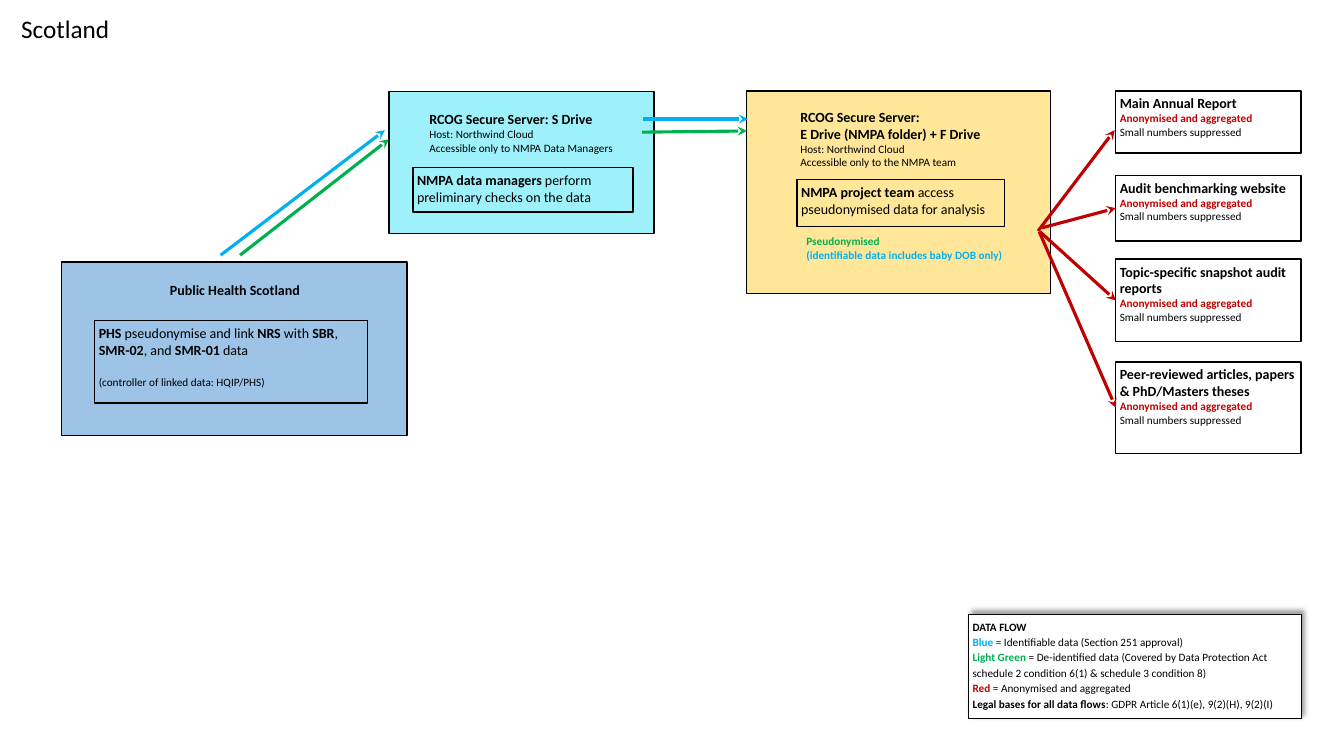
from dataclasses import dataclass

import pptx
import pptx.dml.color
import pptx.enum.shapes
import pptx.enum.text
import pptx.oxml
import pptx.oxml.ns
import pptx.util
from lxml import etree
from pptx.util import Cm, Pt


@dataclass(frozen=True)
class Theme:
    font: str = "Calibri"
    black: str = "000000"
    white: str = "FFFFFF"
    blue: str = "00B0F0"
    green: str = "00B050"
    red: str = "C00000"
    source_fill: str = "9DC3E6"
    s_drive_fill: str = "9EF1FA"
    e_drive_fill: str = "FFE699"
    title: int = 18
    body: int = 10
    small: int = 8
    outline: float = 1
    thin: float = 0.5
    arrow: float = 2.25


T = Theme()


@dataclass
class Run:
    text: str
    bold: bool = False
    color: str = T.black


@dataclass
class Para:
    runs: list
    size: int = T.body
    align: pptx.enum.text.PP_ALIGN = pptx.enum.text.PP_ALIGN.LEFT
    before: float = 0
    spacing: float = 1


def rgb(value):
    return pptx.dml.color.RGBColor.from_string(value)


def line(text, size=T.body, bold=False, color=T.black, **options):
    return Para([Run(text, bold, color)], size, **options)


def write(tf, paras, inset=0.1):
    tf.word_wrap = True
    tf.vertical_anchor = pptx.enum.text.MSO_ANCHOR.TOP
    if inset is not None:
        tf.margin_left = tf.margin_right = tf.margin_top = tf.margin_bottom = Cm(inset)
    for i, para in enumerate(paras):
        p = tf.paragraphs[0] if i == 0 else tf.add_paragraph()
        p.alignment = para.align
        p.space_before = Pt(para.before)
        p.line_spacing = para.spacing
        p.font.name = T.font
        p.font.size = Pt(para.size)
        same_bold = len({run.bold for run in para.runs}) == 1
        same_color = len({run.color for run in para.runs}) == 1
        if same_bold:
            p.font.bold = para.runs[0].bold
        if same_color:
            p.font.color.rgb = rgb(para.runs[0].color)
        for run in para.runs:
            r = p.add_run()
            r.text = run.text
            if not same_bold:
                r.font.bold = run.bold
            if not same_color:
                r.font.color.rgb = rgb(run.color)


def add_title(s, text, x, y, w, h):
    sp = s.shapes.title
    sp.left, sp.top, sp.width, sp.height = Cm(x), Cm(y), Cm(w), Cm(h)
    write(sp.text_frame, [line(text, T.title)], inset=None)
    sp.text_frame.auto_size = pptx.enum.text.MSO_AUTO_SIZE.SHAPE_TO_FIT_TEXT


def add_box(s, x, y, w, h, paras=(), fill=None, width=T.outline):
    sp = s.shapes.add_shape(pptx.enum.shapes.MSO_SHAPE.RECTANGLE, Cm(x), Cm(y), Cm(w), Cm(h))
    sp.shadow.inherit = False
    if fill:
        sp.fill.solid()
        sp.fill.fore_color.rgb = rgb(fill)
    else:
        sp.fill.background()
    sp.line.color.rgb = rgb(T.black)
    sp.line.width = Pt(width)
    write(sp.text_frame, paras)
    return sp


def add_label(s, x, y, w, h, paras, inset=0.1):
    sp = s.shapes.add_textbox(Cm(x), Cm(y), Cm(w), Cm(h))
    write(sp.text_frame, paras, inset)


def add_arrow(s, color, x1, y1, x2, y2):
    cxn = s.shapes.add_connector(
        pptx.enum.shapes.MSO_CONNECTOR.STRAIGHT, Cm(x1), Cm(y1), Cm(x2), Cm(y2))
    cxn.line.color.rgb = rgb(color)
    cxn.line.width = Pt(T.arrow)
    etree.SubElement(cxn.line._get_or_add_ln(), pptx.oxml.ns.qn("a:tailEnd"), type="stealth")
    etree.SubElement(cxn._element.spPr, pptx.oxml.ns.qn("a:effectLst"))
    return cxn


def add_shadow(sp):
    effects = sp._element.spPr.find(pptx.oxml.ns.qn("a:effectLst"))
    effects.append(pptx.oxml.parse_xml(
        f'<a:outerShdw {pptx.oxml.ns.nsdecls("a")} blurRad="{Pt(4)}" dist="{Pt(3)}" '
        f'dir="{315 * 60000}" algn="bl" rotWithShape="0"><a:srgbClr val="{T.black}">'
        '<a:alpha val="40000"/></a:srgbClr></a:outerShdw>'))


def add_source(s):
    add_box(s, 1.55, 6.6, 8.71, 4.37, fill=T.source_fill)
    add_label(s, 3.05, 6.99, 5.74, 0.58, [
        line("Public Health Scotland", bold=True, align=pptx.enum.text.PP_ALIGN.CENTER)])
    add_box(s, 2.39, 8.08, 6.88, 2.08, [
        Para([Run("PHS ", True), Run("pseudonymise and link "), Run("NRS ", True),
              Run("with "), Run("SBR", True), Run(", "), Run("SMR-02", True),
              Run(", and "), Run("SMR-01 ", True), Run("data")]),
        line("(controller of linked data: HQIP/PHS)", T.small, before=12)])


def add_s_drive(s):
    add_box(s, 9.8, 2.31, 6.68, 3.58, fill=T.s_drive_fill)
    add_label(s, 10.72, 2.69, 5, 1.4, [
        line("RCOG Secure Server: S Drive", bold=True),
        line("Host: Northwind Cloud", T.small),
        line("Accessible only to NMPA Data Managers", T.small)])
    add_box(s, 10.41, 4.22, 5.54, 1.12, [
        Para([Run("NMPA data managers ", True), Run("perform preliminary checks on the data")])])


def add_e_drive(s):
    add_box(s, 18.82, 2.29, 7.65, 5.11, fill=T.e_drive_fill)
    add_label(s, 20.07, 2.64, 5.26, 1.78, [
        line("RCOG Secure Server:", bold=True),
        line("E Drive (NMPA folder) + F Drive", bold=True),
        line("Host: Northwind Cloud", T.small),
        line("Accessible only to the NMPA team", T.small)])
    add_box(s, 20.09, 4.52, 5.23, 1.19, [
        Para([Run("NMPA project team ", True), Run("access pseudonymised data for analysis")])])
    add_label(s, 20.07, 5.79, 5.54, 1.27, [
        line("Pseudonymised", T.small, True, T.green),
        line("(identifiable data includes baby DOB only)", T.small, True, T.blue)], inset=None)


def add_outputs(s):
    outputs = [
        ("Main Annual Report", 2.29, 1.57, (26.16, 5.82), 3.28, False),
        ("Audit benchmarking website", 4.42, 1.65, (26.26, 5.74), 5.21, True),
        ("Topic-specific snapshot audit reports", 6.53, 2.08, (26.21, 5.84), 7.62, True),
        ("Peer-reviewed articles, papers & PhD/Masters theses", 9.12, 2.31,
         (26.19, 5.84), 10.16, True),
    ]
    for name, y, h, start, end_y, joined in outputs:
        sp = add_box(s, 28.12, y, 4.67, h, [
            line(name, bold=True),
            line("Anonymised and aggregated", T.small, True, T.red),
            line("Small numbers suppressed", T.small)])
        cxn = add_arrow(s, T.red, *start, 28.09, end_y)
        if joined:
            cxn.end_connect(sp, 1)


def add_legend(s):
    entries = [
        [Run("DATA FLOW", True)],
        [Run("Blue", True, T.blue), Run(" = Identifiable data (Section 251 approval)")],
        [Run("Light Green ", True, T.green),
         Run("= De-identified data (Covered by Data Protection Act schedule 2 "
             "condition 6(1) & schedule 3 condition 8)")],
        [Run("Red ", True, T.red), Run("= Anonymised and aggregated")],
        [Run("Legal bases for all data flows", True),
         Run(": GDPR Article 6(1)(e), 9(2)(H), 9(2)(I)")],
    ]
    paras = [Para(runs, T.small, spacing=1.15) for runs in entries]
    add_shadow(add_box(s, 24.41, 15.47, 8.38, 2.64, paras, T.white, T.thin))


def main():
    prs = pptx.Presentation()
    prs.slide_width, prs.slide_height = Cm(33.87), Cm(19.05)
    s = prs.slides.add_slide(prs.slide_layouts[5])
    add_title(s, "Scotland", 0.28, 0.2, 3.28, 1.02)
    add_source(s)
    add_s_drive(s)
    add_e_drive(s)
    add_outputs(s)
    add_arrow(s, T.green, 6.05, 6.43, 9.8, 3.51)
    add_arrow(s, T.blue, 5.56, 6.43, 9.7, 3.28)
    add_arrow(s, T.green, 16.18, 3.33, 18.82, 3.3)
    add_arrow(s, T.blue, 16.21, 3, 18.85, 3)
    add_legend(s)
    prs.save("out.pptx")


if __name__ == "__main__":
    main()
